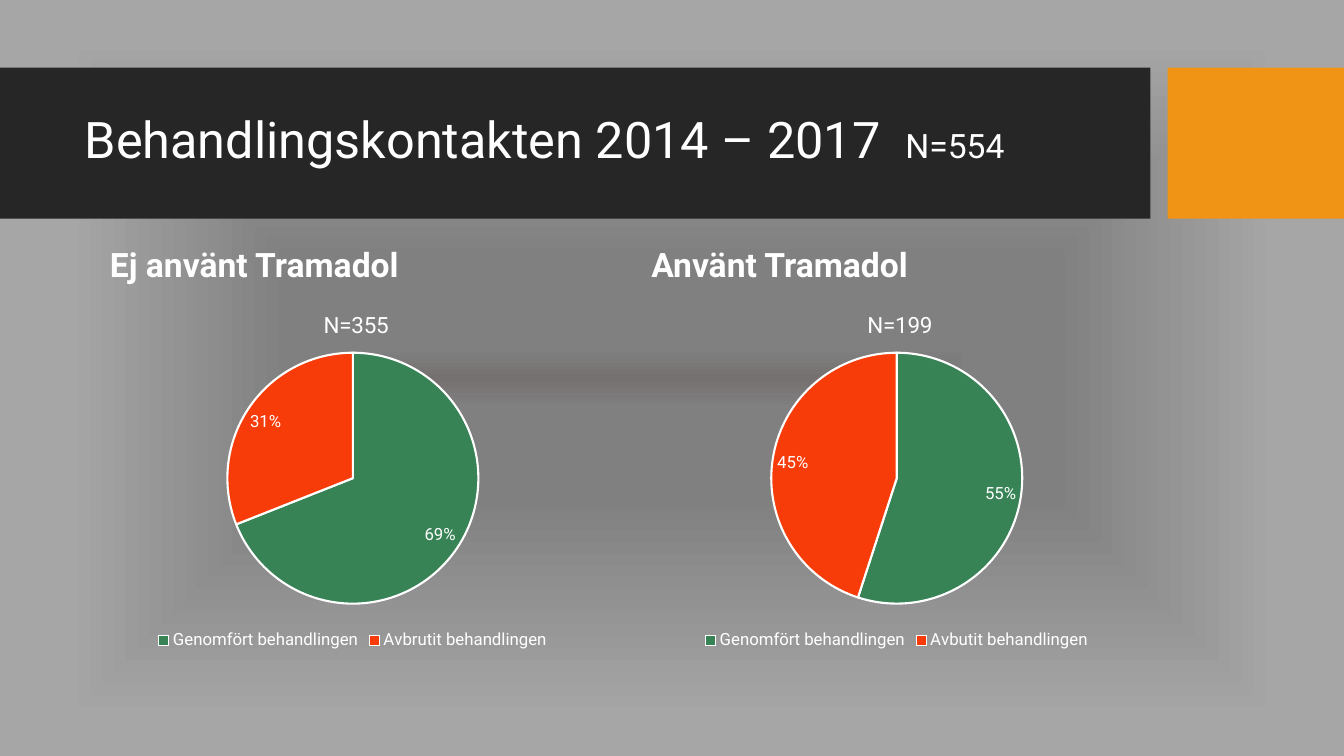
from lxml import etree
from pptx import Presentation
from pptx.chart.data import CategoryChartData
from pptx.dml.color import RGBColor
from pptx.enum.chart import XL_CHART_TYPE as CT, XL_LABEL_POSITION as LP, XL_LEGEND_POSITION as LEG
from pptx.enum.shapes import MSO_SHAPE as SHAPE
from pptx.enum.text import MSO_ANCHOR as ANCHOR, MSO_AUTO_SIZE as AUTO, PP_ALIGN as ALIGN
from pptx.oxml import parse_xml
from pptx.oxml.ns import nsdecls, qn
from pptx.util import Inches, Pt

WHITE = RGBColor(0xFF, 0xFF, 0xFF)
BAND = RGBColor(0x26, 0x26, 0x26)
ORANGE = RGBColor(0xF0, 0x94, 0x15)
GREEN = RGBColor(0x38, 0x83, 0x56)
RED = RGBColor(0xF7, 0x3C, 0x09)
BG_STOPS = [(0, "767171"), (8, "808080"), (31, "808080"), (90, "A6A6A6")]
FONT = "Roboto"
PIE_TOP, PIE_SIZE = 0.64, 2.49


def set_font(font, size, bold=False):
    font.name, font.size, font.bold = FONT, Pt(size), bold
    font.color.rgb = WHITE


def add_background(slide):
    stops = "".join(f'<a:gs pos="{pos * 1000}"><a:srgbClr val="{color}"/></a:gs>'
                    for pos, color in BG_STOPS)
    bg = parse_xml(
        f'<p:bg {nsdecls("p", "a")}><p:bgPr><a:gradFill><a:gsLst>{stops}</a:gsLst>'
        '<a:path path="shape"><a:fillToRect l="50000" t="50000" r="50000" b="50000"/></a:path>'
        '</a:gradFill><a:effectLst/></p:bgPr></p:bg>')
    slide.element.cSld.insert(0, bg)


def add_band(slide, top, height):
    """Place the title band and its accent block behind the placeholders."""
    for i, (left, width, color) in enumerate([(0, 11.41, BAND), (11.58, 1.75, ORANGE)]):
        s = slide.shapes.add_shape(SHAPE.RECTANGLE, Inches(left), Inches(top),
                                   Inches(width), Inches(height))
        s.shadow.inherit = False
        s.fill.solid()
        s.fill.fore_color.rgb = color
        s.line.fill.background()
        slide.shapes.element.insert(2 + i, s.element)


def place_text(ph, box, anchor):
    """Move a placeholder to its box and return its first paragraph."""
    ph.left, ph.top, ph.width, ph.height = map(Inches, box)
    tf = ph.text_frame
    tf.word_wrap, tf.auto_size = True, AUTO.NONE
    tf.vertical_anchor = anchor
    p = tf.paragraphs[0]
    p.alignment, p.line_spacing, p.space_before = ALIGN.LEFT, 0.9, Pt(0)
    return p


def fill_title(ph, box):
    p = place_text(ph, box, ANCHOR.MIDDLE)
    tabs = etree.SubElement(p._p.get_or_add_pPr(), qn("a:tabLst"))
    etree.SubElement(tabs, qn("a:tab"), pos=str(Inches(8.14)), algn="l")
    for text, size in [("Behandlingskontakten 2014 – 2017\t", 36), ("N=554", 24)]:
        r = p.add_run()
        r.text = text
        set_font(r.font, size)


def fill_heading(ph, box, text):
    p = place_text(ph, box, ANCHOR.BOTTOM)
    p.text = text
    set_font(p.runs[0].font, 24, bold=True)


def set_layout(parent, index, target="", **fractions):
    """Give a chart part a manual layout, in fractions of the chart."""
    for old in parent.findall(qn("c:layout")):
        parent.remove(old)
    layout = etree.Element(qn("c:layout"))
    manual = etree.SubElement(layout, qn("c:manualLayout"))
    if target:
        etree.SubElement(manual, qn("c:layoutTarget"), val=target)
    for axis in "xy":
        etree.SubElement(manual, qn(f"c:{axis}Mode"), val="edge")
    for key, value in fractions.items():
        etree.SubElement(manual, qn(f"c:{key}"), val=f"{value:.4f}")
    parent.insert(index, layout)


def add_pie(slide, box, title, categories, values):
    width, height = box[2:]
    data = CategoryChartData(number_format="0%")
    data.categories = categories
    data.add_series("Series 1", values)
    chart = slide.shapes.add_chart(CT.PIE, *map(Inches, box), data).chart
    set_font(chart.font, 10)

    chart.has_title = True
    chart.chart_title.include_in_layout = False
    p = chart.chart_title.text_frame.paragraphs[0]
    p.text = title
    set_font(p.runs[0].font, 16)
    set_layout(chart.chart_title.element, 1, x=0.44, y=0.05)

    chart.has_legend = True
    chart.legend.position = LEG.BOTTOM
    chart.legend.include_in_layout = False
    set_font(chart.legend.font, 12)

    plot = chart.plots[0]
    plot.vary_by_categories = True
    for i, color in enumerate([GREEN, RED]):
        fmt = plot.series[0].points[i].format
        fmt.fill.solid()
        fmt.fill.fore_color.rgb = color
        fmt.line.color.rgb = WHITE
        fmt.line.width = Pt(1.5)
    labels = plot.series[0].data_labels
    labels.show_value = True
    labels.number_format, labels.number_format_is_linked = "0%", False
    labels.position = LP.BEST_FIT
    set_font(labels.font, 12)
    area = chart.element.find(".//" + qn("c:plotArea"))
    set_layout(area, 0, "inner", x=(1 - PIE_SIZE / width) / 2, y=PIE_TOP / height,
               w=PIE_SIZE / width, h=PIE_SIZE / height)


def add_comparison(prs):
    slide = prs.slides.add_slide(prs.slide_layouts.get_by_name("Comparison"))
    add_background(slide)
    add_band(slide, 0.67, 1.5)
    ph = {s.placeholder_format.idx: s for s in slide.placeholders}
    fill_title(ph[0], (0.74, 0.82, 10.51, 1.18))
    columns = [
        (1, 0.99, "Ej använt Tramadol", 0.74, 5.52, "N=355", "Avbrutit behandlingen", 0.69),
        (3, 6.36, "Använt Tramadol", 6.12, 5.55, "N=199", "Avbutit behandlingen", 0.55),
    ]
    for idx, text_left, heading, left, width, count, stopped, share in columns:
        fill_heading(ph[idx], (text_left, 2.23, 4.89, 0.64), heading)
        add_pie(slide, (left, 2.86, width, 3.63), count,
                ["Genomfört behandlingen", stopped], [share, round(1 - share, 2)])
    for s in list(slide.placeholders):
        if s.placeholder_format.idx not in (0, 1, 3):
            s.element.getparent().remove(s.element)


def main():
    prs = Presentation()
    prs.slide_width, prs.slide_height = Inches(13.33), Inches(7.5)
    add_comparison(prs)
    prs.save("out.pptx")


if __name__ == "__main__":
    main()
